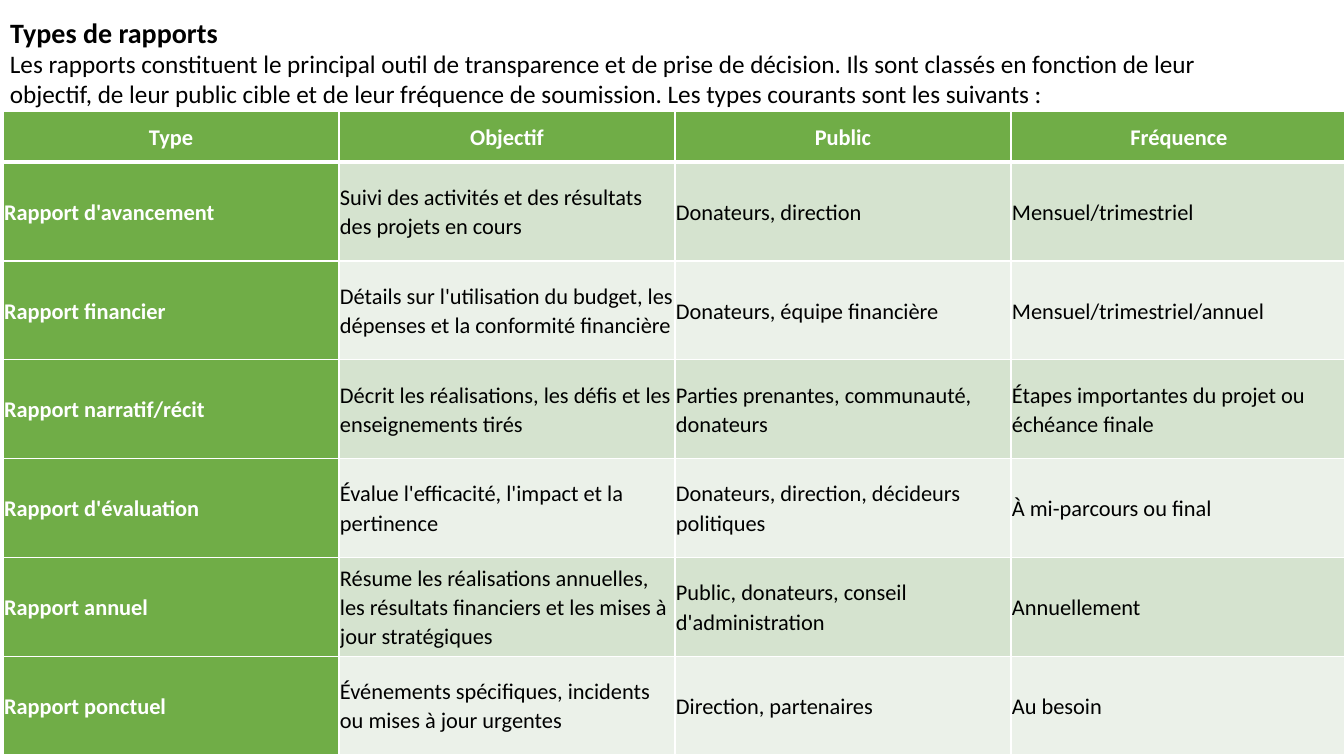
from dataclasses import dataclass

from lxml.etree import SubElement
from pptx import Presentation
from pptx.dml.color import RGBColor
from pptx.enum.text import MSO_ANCHOR, MSO_AUTO_SIZE, PP_ALIGN
from pptx.oxml.ns import qn
from pptx.util import Inches, Pt


@dataclass(frozen=True)
class Theme:
    """Fonts, type sizes and colours of the slide."""

    font: str = "Calibri"
    title_size: int = 20
    intro_size: int = 18
    cell_size: int = 16
    text: str = "000000"
    white: str = "FFFFFF"
    green: str = "70AD47"
    bands: tuple = ("D5E3CF", "EBF1E9")


THEME = Theme()
TITLE = "Types de rapports"
INTRO = (
    "Les rapports constituent le principal outil de transparence et de prise de décision. "
    "Ils sont classés en fonction de leur objectif, de leur public cible et de leur "
    "fréquence de soumission. Les types courants sont les suivants :"
)
REPORTS = [
    ("Type", "Objectif", "Public", "Fréquence"),
    ("Rapport d'avancement", "Suivi des activités et des résultats des projets en cours",
     "Donateurs, direction", "Mensuel/trimestriel"),
    ("Rapport financier",
     "Détails sur l'utilisation du budget, les dépenses et la conformité financière",
     "Donateurs, équipe financière", "Mensuel/trimestriel/annuel"),
    ("Rapport narratif/récit", "Décrit les réalisations, les défis et les enseignements tirés",
     "Parties prenantes, communauté, donateurs",
     "Étapes importantes du projet ou échéance finale"),
    ("Rapport d'évaluation", "Évalue l'efficacité, l'impact et la pertinence",
     "Donateurs, direction, décideurs politiques", "À mi-parcours ou final"),
    ("Rapport annuel",
     "Résume les réalisations annuelles, les résultats financiers et les mises à jour stratégiques",
     "Public, donateurs, conseil d'administration", "Annuellement"),
    ("Rapport ponctuel", "Événements spécifiques, incidents ou mises à jour urgentes",
     "Direction, partenaires", "Au besoin"),
]


def write(frame, text, size, color, bold=False, align=PP_ALIGN.LEFT, spacing=1.0):
    """Put one formatted run in the first paragraph of a text frame."""
    paragraph = frame.paragraphs[0]
    paragraph.alignment = align
    paragraph.line_spacing = spacing
    run = paragraph.add_run()
    run.text = text
    run.font.name = THEME.font
    run.font.size = Pt(size)
    run.font.bold = bold
    run.font.color.rgb = RGBColor.from_string(color)


def fit_frame(frame):
    """Wrap text from the top of its box without resizing."""
    frame.word_wrap = True
    frame.auto_size = MSO_AUTO_SIZE.NONE
    frame.vertical_anchor = MSO_ANCHOR.TOP


def add_heading(slide):
    """Place the title and the introduction above the table."""
    title = slide.shapes.title
    title.left, title.top = Inches(0), Inches(0.1)
    title.width, title.height = Inches(12.59), Inches(0.43)
    fit_frame(title.text_frame)
    write(title.text_frame, TITLE, THEME.title_size, THEME.text, bold=True)
    intro = slide.shapes.add_textbox(Inches(0), Inches(0.43), Inches(12.59), Inches(0.71))
    fit_frame(intro.text_frame)
    write(intro.text_frame, INTRO, THEME.intro_size, THEME.text)


def add_borders(cell, top, bottom):
    """Draw white cell borders, with the top and bottom widths in points."""
    properties = cell._tc.get_or_add_tcPr()
    for side, width in (("L", 1), ("R", 1), ("T", top), ("B", bottom)):
        line = SubElement(properties, qn(f"a:ln{side}"), w=str(Pt(width)))
        fill = SubElement(line, qn("a:solidFill"))
        SubElement(fill, qn("a:srgbClr"), val=THEME.white)


def format_cell(cell, text, row, column):
    """Fill a cell according to its place in the table."""
    is_header = row == 0
    is_label = is_header or column == 0
    cell.margin_left = cell.margin_right = Inches(0.01)
    cell.margin_top = cell.margin_bottom = Inches(0.01)
    cell.vertical_anchor = MSO_ANCHOR.MIDDLE
    add_borders(cell, top=3 if row == 1 else 1, bottom=3 if is_header else 1)
    cell.fill.solid()
    band = THEME.bands[(row - 1) % 2]
    cell.fill.fore_color.rgb = RGBColor.from_string(THEME.green if is_label else band)
    write(cell.text_frame, text, THEME.cell_size,
          THEME.white if is_label else THEME.text, bold=is_label,
          align=PP_ALIGN.CENTER if is_header else PP_ALIGN.LEFT, spacing=1.07)


def add_report_table(slide):
    """Add the table of report types."""
    table = slide.shapes.add_table(
        len(REPORTS), len(REPORTS[0]),
        Inches(0.03), Inches(1.11), Inches(13.33), Inches(6.39)).table
    table.first_row = table.horz_banding = False
    for row, report in enumerate(REPORTS):
        table.rows[row].height = Inches(0.98 if row else 0.5)
        for column, text in enumerate(report):
            format_cell(table.cell(row, column), text, row, column)


def main():
    """Build and save the slide."""
    deck = Presentation()
    deck.slide_width, deck.slide_height = Inches(13.33), Inches(7.5)
    slide = deck.slides.add_slide(deck.slide_layouts[5])
    add_heading(slide)
    add_report_table(slide)
    deck.save("out.pptx")


if __name__ == "__main__":
    main()
